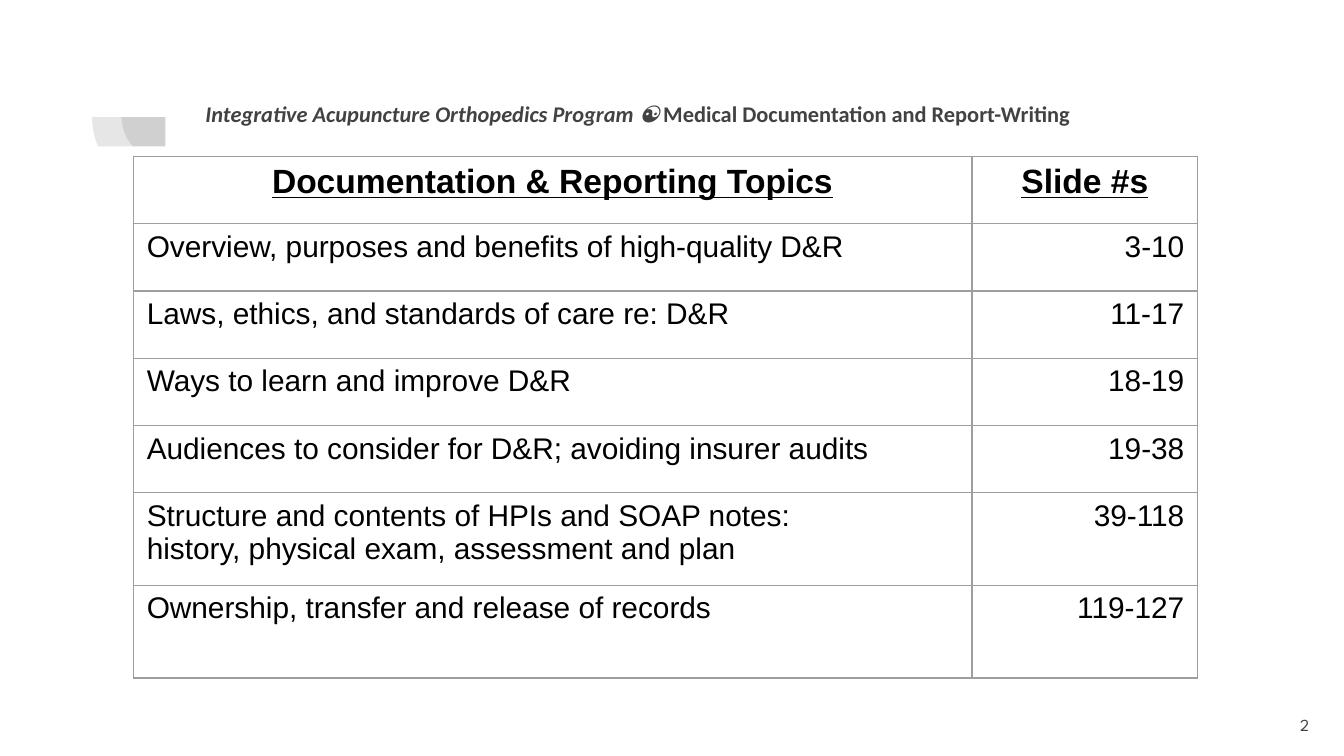
from dataclasses import dataclass

from lxml.etree import SubElement
from pptx import Presentation
from pptx.dml.color import RGBColor
from pptx.enum.shapes import MSO_SHAPE
from pptx.enum.text import MSO_ANCHOR, PP_ALIGN
from pptx.oxml import parse_xml
from pptx.oxml.ns import nsdecls, qn
from pptx.util import Inches, Pt

SLIDE_WIDTH = Inches(10)
SLIDE_HEIGHT = SLIDE_WIDTH * 9 // 16


@dataclass(frozen=True)
class Theme:
    ink: str = "000000"
    grey: str = "424242"
    paper: str = "FFFFFF"
    border: str = "9E9E9E"
    body_font: str = "Arial"
    title_font: str = "Calibri"
    number_font: str = "League Spartan"
    heading_size: int = 18
    body_size: int = 16
    title_size: int = 12
    number_size: int = 9
    border_width: float = 0.75
    pie_opacity: int = 13


THEME = Theme()

HEADINGS = ("Documentation & Reporting Topics", "Slide #s")
TOPICS = (
    ("Overview, purposes and benefits of high-quality D&R", "3-10"),
    ("Laws, ethics, and standards of care re: D&R", "11-17"),
    ("Ways to learn and improve D&R", "18-19"),
    ("Audiences to consider for D&R; avoiding insurer audits", "19-38"),
    ("Structure and contents of HPIs and SOAP notes:\n"
     "history, physical exam, assessment and plan", "39-118"),
    ("Ownership, transfer and release of records", "119-127"),
)
COLUMN_WIDTHS = (6.24, 1.68)
ROW_HEIGHTS = (0.5,) * 5 + (0.69,) * 2


def across(percent):
    return round(SLIDE_WIDTH * percent / 100)


def down(percent):
    return round(SLIDE_HEIGHT * percent / 100)


def box(left, top, width, height):
    return across(left), down(top), across(width), down(height)


def style_run(run, font, size, color, bold=False, italic=False, underline=False):
    run.font.name = font
    run.font.size = Pt(size)
    run.font.color.rgb = RGBColor.from_string(color)
    run.font.bold = bold
    run.font.italic = italic
    run.font.underline = underline


def add_filled_shape(slide, kind, bounds, color):
    shape = slide.shapes.add_shape(kind, *bounds)
    shape.shadow.inherit = False
    shape.fill.solid()
    shape.fill.fore_color.rgb = RGBColor.from_string(color)
    shape.line.fill.background()
    return shape


def add_quarter_pie(slide, center_x, center_y, radius):
    reach = across(radius)
    bounds = (across(center_x) - reach, down(center_y) - reach, 2 * reach, 2 * reach)
    pie = add_filled_shape(slide, MSO_SHAPE.PIE, bounds, THEME.grey)
    pie.adjustments[0], pie.adjustments[1] = 107.93, 162
    pie.rotation = 270
    color = pie.fill._xPr.find(qn("a:solidFill"))[0]
    SubElement(color, qn("a:alpha")).set("val", str(THEME.pie_opacity * 1000))


def add_text(slide, bounds, pieces, font, size, align=PP_ALIGN.LEFT, anchor=MSO_ANCHOR.TOP):
    text_frame = slide.shapes.add_textbox(*bounds).text_frame
    text_frame.word_wrap = True
    text_frame.vertical_anchor = anchor
    text_frame.margin_left = text_frame.margin_right = Inches(0.1)
    text_frame.margin_top = text_frame.margin_bottom = Inches(0.1)
    paragraph = text_frame.paragraphs[0]
    paragraph.alignment = align
    for text, emphasis in pieces:
        run = paragraph.add_run()
        run.text = text
        style_run(run, font, size, THEME.grey, **emphasis)


def add_borders(cell):
    properties = cell._tc.get_or_add_tcPr()
    for index, side in enumerate(("lnL", "lnR", "lnT", "lnB")):
        properties.insert(index, parse_xml(
            f'<a:{side} {nsdecls("a")} w="{Pt(THEME.border_width)}"><a:solidFill>'
            f'<a:srgbClr val="{THEME.border}"/></a:solidFill></a:{side}>'))


def fill_cell(cell, text, align, size, indent=0, **emphasis):
    cell.fill.background()
    add_borders(cell)
    cell.text_frame.text = text
    for paragraph in cell.text_frame.paragraphs:
        paragraph.alignment = align
        if indent:
            properties = paragraph._p.get_or_add_pPr()
            properties.set("marL", str(Inches(indent)))
            properties.set("indent", "0")
        for run in paragraph.runs:
            style_run(run, THEME.body_font, size, THEME.ink, **emphasis)


def add_topic_table(slide, left, top):
    table = slide.shapes.add_table(
        len(ROW_HEIGHTS), len(COLUMN_WIDTHS), across(left), down(top),
        Inches(sum(COLUMN_WIDTHS)), Inches(sum(ROW_HEIGHTS))).table
    table.first_row = table.horz_banding = False
    for column, width in zip(table.columns, COLUMN_WIDTHS):
        column.width = Inches(width)
    for row, height in zip(table.rows, ROW_HEIGHTS):
        row.height = Inches(height)
    for column, heading in enumerate(HEADINGS):
        fill_cell(table.cell(0, column), heading, PP_ALIGN.CENTER,
                  THEME.heading_size, bold=True, underline=True)
    for row, (topic, slide_range) in enumerate(TOPICS, start=1):
        fill_cell(table.cell(row, 0), topic, PP_ALIGN.LEFT, THEME.body_size)
        fill_cell(table.cell(row, 1), slide_range, PP_ALIGN.RIGHT,
                  THEME.body_size, indent=0.5)


def main():
    presentation = Presentation()
    presentation.slide_width, presentation.slide_height = SLIDE_WIDTH, SLIDE_HEIGHT
    slide = presentation.slides.add_slide(presentation.slide_layouts[6])

    for radius in (3.25, 5.45):
        add_quarter_pie(slide, 12.3, 15.5, radius)
    add_text(slide, box(14.3, 11.53, 76.9, 7.64), (
        ("Integrative Acupuncture Orthopedics Program ☯ ", {"bold": True, "italic": True}),
        ("Medical Documentation and Report-Writing", {"bold": True}),
    ), THEME.title_font, THEME.title_size)
    add_filled_shape(slide, MSO_SHAPE.RECTANGLE, box(3.1, 19.36, 92.7, 77.51), THEME.paper)
    add_text(slide, box(92.4, 92.09, 6, 7.64), (("2", {}),), THEME.number_font,
             THEME.number_size, PP_ALIGN.RIGHT, MSO_ANCHOR.MIDDLE)
    add_topic_table(slide, 9.92, 20.72)

    presentation.save("out.pptx")


if __name__ == "__main__":
    main()
